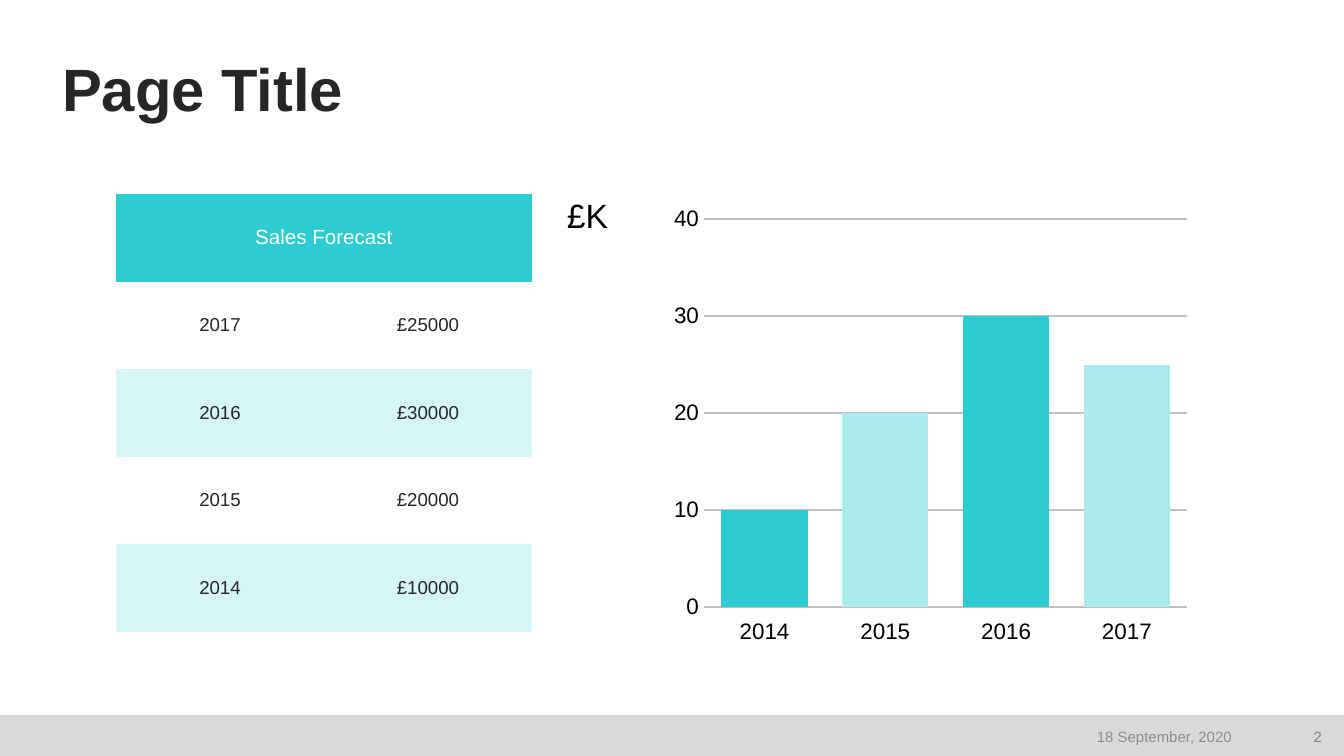
"""Build a sales forecast slide with a table and a column chart."""
import pptx
import pptx.chart.data
import pptx.dml.color
import pptx.enum.chart
import pptx.enum.shapes
import pptx.enum.text
import pptx.oxml
import pptx.oxml.ns
import pptx.util

COLORS = {
    "teal": "2DCCD3", "light teal": "ABEBED", "pale teal": "D5F5F6",
    "white": "FFFFFF", "black": "000000", "ink": "262626",
    "footer": "D9D9D9", "date": "8C8C8C", "number": "808080", "grid": "BFBFBF",
}
FONT = "Arial"
SLIDE_SIZE = (1344, 756)
FOOTER_BOX = (0, 715, 1344, 41)
TABLE_BOX = (116, 194, 416, 438)
CHART_BOX = (671, 188, 519, 466)
PLOT = {"x": 0.064, "y": 0.067, "w": 0.931, "h": 0.832}

TABLE_TITLE = "Sales Forecast"
FORECAST = [("2017", "£25000"), ("2016", "£30000"), ("2015", "£20000"), ("2014", "£10000")]
CHART_VALUES = {"2014": 10, "2015": 20, "2016": 30, "2017": 25}
TEXTS = [
    {"text": "Page Title", "box": (62, 54, 1223, 70), "size": 32, "color": "ink",
     "bold": True, "anchor": "BOTTOM", "spacing": 0.9},
    {"text": "£K", "box": (567, 195, 67, 40), "size": 18, "color": "black"},
    {"text": "18 September, 2020", "box": (943, 719, 302, 35), "size": 8, "color": "date",
     "anchor": "MIDDLE", "align": "RIGHT", "inset": 13},
    {"text": "2", "box": (1285, 719, 50, 35), "size": 8, "color": "number",
     "anchor": "MIDDLE", "align": "RIGHT", "inset": 13},
]
NO_STYLE = "{2D5ABB26-0587-4C30-8999-92F81FD0307C}"


def px(length):
    return pptx.util.Emu(round(length * 914400 / 134.4))


def place(box):
    return [px(length) for length in box]


def rgb(name):
    return pptx.dml.color.RGBColor.from_string(COLORS[name])


def fill(target, color):
    target.fill.solid()
    target.fill.fore_color.rgb = rgb(color)


def style_font(font, size, color, bold=False):
    font.name = FONT
    font.size = pptx.util.Pt(size)
    font.bold = bold
    font.color.rgb = rgb(color)


def set_margins(target, inset):
    target.margin_left = target.margin_right = px(inset)
    target.margin_top = target.margin_bottom = px(inset)


def write(frame, text, size, color, bold=False, align="LEFT", spacing=1.0):
    paragraph = frame.paragraphs[0]
    paragraph.alignment = getattr(pptx.enum.text.PP_ALIGN, align)
    paragraph.line_spacing = spacing
    run = paragraph.add_run()
    run.text = text
    style_font(run.font, size, color, bold)


def add_text(slide, text, box, size, color, anchor="TOP", inset=0, **options):
    frame = slide.shapes.add_textbox(*place(box)).text_frame
    frame.word_wrap = True
    frame.vertical_anchor = getattr(pptx.enum.text.MSO_ANCHOR, anchor)
    set_margins(frame, inset)
    write(frame, text, size, color, **options)


def add_footer(slide):
    shape = slide.shapes.add_shape(
        pptx.enum.shapes.MSO_SHAPE.RECTANGLE, *place(FOOTER_BOX))
    shape.shadow.inherit = False
    fill(shape, "footer")
    shape.line.fill.background()


def fill_cell(cell, text, size, color, background, inset):
    fill(cell, background)
    cell.vertical_anchor = pptx.enum.text.MSO_ANCHOR.MIDDLE
    set_margins(cell, inset)
    write(cell.text_frame, text, size, color, align="CENTER")


def add_forecast_table(slide):
    table = slide.shapes.add_table(len(FORECAST) + 1, 2, *place(TABLE_BOX)).table
    table.first_row = table.horz_banding = False
    table._tbl.tblPr.find(pptx.oxml.ns.qn("a:tableStyleId")).text = NO_STYLE
    header = table.cell(0, 0)
    header.merge(table.cell(0, 1))
    fill_cell(header, TABLE_TITLE, 11, "white", "teal", 7)
    for row, values in enumerate(FORECAST, start=1):
        background = "white" if row % 2 else "pale teal"
        for column, value in enumerate(values):
            fill_cell(table.cell(row, column), value, 10, "ink", background, 3)


def set_plot_layout(chart):
    plot_area = chart._chartSpace.chart.plotArea
    for old in plot_area.findall(pptx.oxml.ns.qn("c:layout")):
        plot_area.remove(old)
    modes = '<c:xMode val="edge"/><c:yMode val="edge"/>'
    sizes = "".join(f'<c:{key} val="{value}"/>' for key, value in PLOT.items())
    plot_area.insert(0, pptx.oxml.parse_xml(
        f'<c:layout {pptx.oxml.ns.nsdecls("c")}><c:manualLayout>'
        f'<c:layoutTarget val="inner"/>{modes}{sizes}</c:manualLayout></c:layout>'))


def style_line(line):
    line.color.rgb = rgb("grid")
    line.width = pptx.util.Pt(1)


def add_sales_chart(slide):
    data = pptx.chart.data.CategoryChartData()
    data.categories = list(CHART_VALUES)
    data.add_series("Series 1", list(CHART_VALUES.values()))
    chart = slide.shapes.add_chart(
        pptx.enum.chart.XL_CHART_TYPE.COLUMN_CLUSTERED, *place(CHART_BOX), data).chart
    chart.has_legend = chart.has_title = False
    style_font(chart.font, 10, "black")
    set_plot_layout(chart)

    plot = chart.plots[0]
    plot.gap_width = 40
    plot.vary_by_categories = False
    series = plot.series[0]
    fill(series.format, "teal")
    for index in range(1, len(CHART_VALUES), 2):
        fill(series.points[index].format, "light teal")

    for axis in (chart.category_axis, chart.value_axis):
        axis.major_tick_mark = axis.minor_tick_mark = pptx.enum.chart.XL_TICK_MARK.NONE
        style_font(axis.tick_labels.font, 12, "black")
    chart.category_axis.tick_label_position = pptx.enum.chart.XL_TICK_LABEL_POSITION.LOW
    style_line(chart.category_axis.format.line)
    value_axis = chart.value_axis
    value_axis.minimum_scale, value_axis.maximum_scale = 0, 40
    value_axis.major_unit = 10
    value_axis.format.line.fill.background()
    style_line(value_axis.major_gridlines.format.line)


def main():
    presentation = pptx.Presentation()
    presentation.slide_width, presentation.slide_height = place(SLIDE_SIZE)
    slide = presentation.slides.add_slide(presentation.slide_layouts[6])
    add_footer(slide)
    add_forecast_table(slide)
    add_sales_chart(slide)
    for item in TEXTS:
        add_text(slide, **item)
    presentation.save("out.pptx")


if __name__ == "__main__":
    main()
